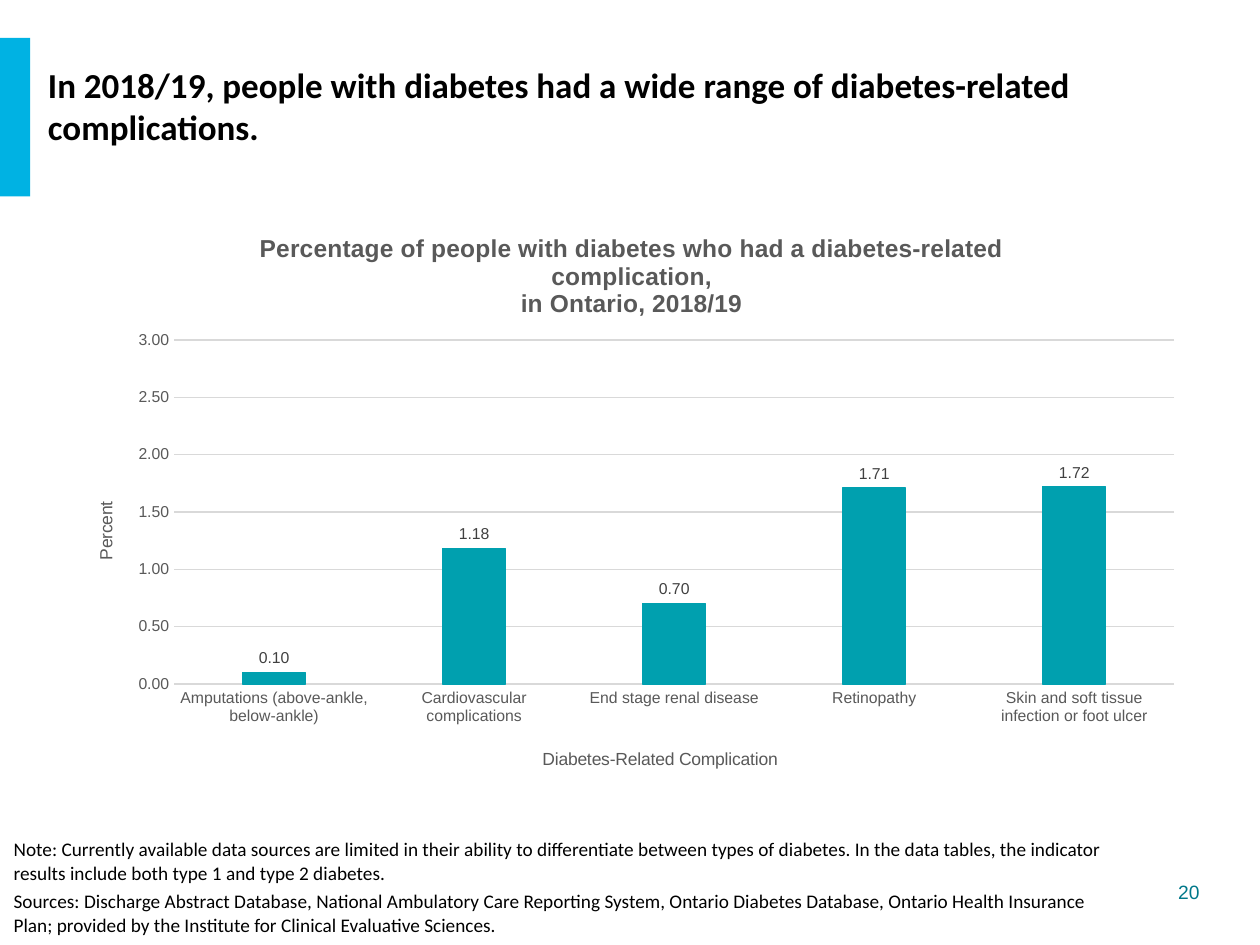
from lxml.etree import SubElement
from pptx import Presentation
from pptx.chart.data import CategoryChartData
from pptx.dml.color import RGBColor
from pptx.enum.chart import XL_CHART_TYPE as ChartType, XL_LABEL_POSITION as LabelPos, XL_TICK_MARK as Tick
from pptx.enum.dml import MSO_LINE as Dash
from pptx.enum.shapes import MSO_SHAPE as Shape
from pptx.enum.text import MSO_ANCHOR as Anchor, PP_ALIGN as Align
from pptx.oxml.ns import qn
from pptx.util import Pt

BLACK = RGBColor(0, 0, 0)
WHITE = RGBColor(255, 255, 255)
BLUE = RGBColor(0x00, 0xB2, 0xE3)
TEAL = RGBColor(0x00, 0xA0, 0xAF)
DARK_TEAL = RGBColor(0x00, 0x78, 0x8A)
GRAY = RGBColor(0x59, 0x59, 0x59)
LABEL_GRAY = RGBColor(0x40, 0x40, 0x40)
GRID_GRAY = RGBColor(0xD9, 0xD9, 0xD9)

HEADLINE = "In 2018/19, people with diabetes had a wide range of diabetes-related complications."
NOTES = [
    "Note: Currently available data sources are limited in their ability to differentiate between types "
    "of diabetes. In the data tables, the indicator results include both type 1 and type 2 diabetes.",
    "Sources:\u00a0Discharge Abstract Database, National Ambulatory Care Reporting System, Ontario Diabetes "
    "Database, Ontario Health Insurance Plan; provided by the Institute for Clinical Evaluative Sciences.",
]
PAGE = "20"
CHART_TITLE = [
    "Percentage of people with diabetes who had a diabetes-related complication,",
    "in Ontario, 2018/19",
]
COMPLICATIONS = {
    "Amputations (above-ankle, below-ankle)": 0.10,
    "Cardiovascular complications": 1.18,
    "End stage renal disease": 0.70,
    "Retinopathy": 1.71,
    "Skin and soft tissue infection or foot ulcer": 1.72,
}
NUMBER_FORMAT = "####0.00"


def box(left, top, width, height):
    return Pt(left), Pt(top), Pt(width), Pt(height)


def style(font, name, size, color, bold=False):
    font.name, font.size, font.bold = name, Pt(size), bold
    font.color.rgb = color


def write(frame, lines, *look, align=Align.LEFT, before=0):
    frame.word_wrap = True
    for i, line in enumerate(lines):
        paragraph = frame.paragraphs[0] if i == 0 else frame.add_paragraph()
        paragraph.alignment = align
        paragraph.space_before = Pt(before)
        run = paragraph.add_run()
        run.text = line
        style(run.font, *look)


def place(element, index, inner=False, **fractions):
    for old in element.findall(qn("c:layout")):
        element.remove(old)
    layout = SubElement(element, qn("c:layout"))
    element.insert(index, layout)
    manual = SubElement(layout, qn("c:manualLayout"))
    settings = {"layoutTarget": "inner"} if inner else {}
    settings.update(xMode="edge", yMode="edge", **fractions)
    for tag, value in settings.items():
        SubElement(manual, qn("c:" + tag)).set("val", str(value))


def add_title(title, lines, size, bold, x, y):
    write(title.text_frame, lines, "Arial", size, GRAY, bold, align=Align.CENTER)
    place(title._element, 1, x=x, y=y)


deck = Presentation()
deck.slide_width, deck.slide_height = Pt(720), Pt(540)
slide = deck.slides.add_slide(deck.slide_layouts[5])
shapes = slide.shapes

accent = shapes.add_shape(Shape.RECTANGLE, *box(0, 21.6, 17.3, 90.7))
accent.shadow.inherit = False
accent.fill.solid()
accent.fill.fore_color.rgb = BLUE
accent.line.fill.background()

headline = shapes.title
headline.left, headline.top, headline.width, headline.height = box(20.2, 32.4, 699.8, 55.4)
headline.line.color.rgb = WHITE
headline.line.width = Pt(3)
headline.line.dash_style = Dash.ROUND_DOT
headline.text_frame.vertical_anchor = Anchor.MIDDLE
write(headline.text_frame, [HEADLINE], "Calibri", 20, BLACK, True)

page = shapes.add_textbox(*box(608.4, 499, 84.2, 20.9))
page.text_frame.vertical_anchor = Anchor.MIDDLE
write(page.text_frame, [PAGE], "Arial", 11, DARK_TEAL, align=Align.RIGHT)

notes = shapes.add_textbox(*box(0.7, 475.2, 640.8, 64.8))
write(notes.text_frame, NOTES, "Calibri", 11, BLACK, before=3.3)

data = CategoryChartData(number_format=NUMBER_FORMAT)
data.categories = list(COMPLICATIONS)
data.add_series("Series 1", list(COMPLICATIONS.values()))
chart = shapes.add_chart(ChartType.COLUMN_CLUSTERED, *box(36, 117.4, 648, 334.8), data).chart
chart.has_legend = False
style(chart.font, "Arial", 10, BLACK)
add_title(chart.chart_title, CHART_TITLE, 14, True, 0.17, 0.04)
place(chart._chartSpace.chart.plotArea, 0, inner=True, x=0.098, y=0.23, w=0.882, h=0.587)

complication_axis, percent_axis = chart.category_axis, chart.value_axis
add_title(complication_axis.axis_title, ["Diabetes-Related Complication"], 10, False, 0.42, 0.92)
add_title(percent_axis.axis_title, ["Percent"], 10, False, 0.025, 0.5)
for axis in (complication_axis, percent_axis):
    axis.major_tick_mark = axis.minor_tick_mark = Tick.NONE
    style(axis.tick_labels.font, "Arial", 9, GRAY)
percent_axis.minimum_scale, percent_axis.maximum_scale, percent_axis.major_unit = 0, 3, 0.5
percent_axis.tick_labels.number_format = NUMBER_FORMAT
percent_axis.tick_labels.number_format_is_linked = False
percent_axis.format.line.fill.background()
for line in (complication_axis.format.line, percent_axis.major_gridlines.format.line):
    line.color.rgb = GRID_GRAY
    line.width = Pt(0.75)

plot = chart.plots[0]
plot.vary_by_categories = False
plot.gap_width, plot.overlap = 219, -27
bars = plot.series[0]
bars.format.fill.solid()
bars.format.fill.fore_color.rgb = TEAL
bars.format.line.color.rgb = TEAL
bars.format.line.width = Pt(0.75)
labels = bars.data_labels
labels.show_value = True
labels.position = LabelPos.OUTSIDE_END
labels.number_format = NUMBER_FORMAT
labels.number_format_is_linked = False
style(labels.font, "Arial", 9, LABEL_GRAY)

deck.save("out.pptx")
